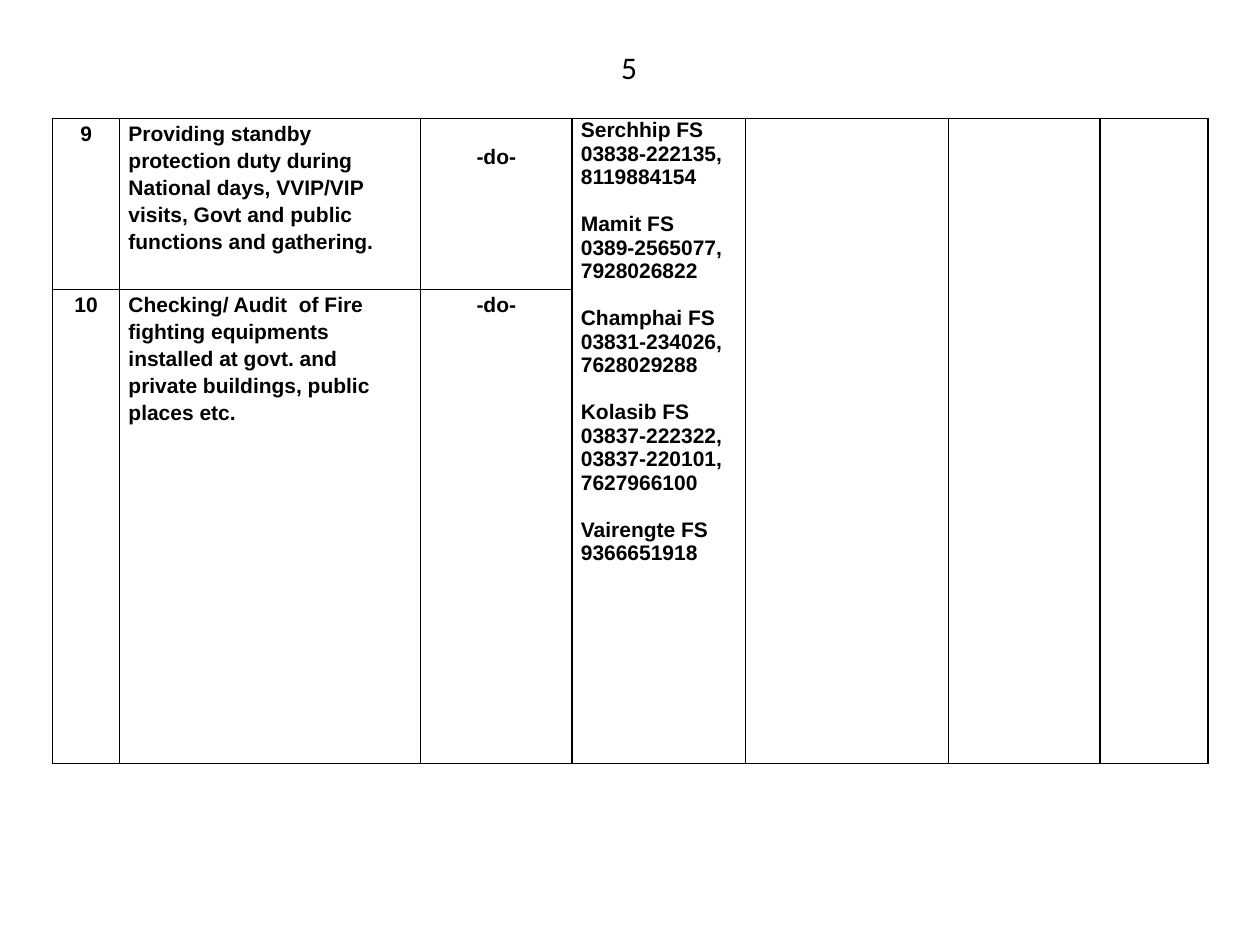
from dataclasses import dataclass

from lxml import etree
from pptx import Presentation
from pptx.dml.color import RGBColor
from pptx.enum.text import MSO_AUTO_SIZE, PP_ALIGN
from pptx.oxml.ns import qn
from pptx.util import Cm, Pt

LEFT, CENTER = PP_ALIGN.LEFT, PP_ALIGN.CENTER
FIT_SHAPE = MSO_AUTO_SIZE.SHAPE_TO_FIT_TEXT


@dataclass(frozen=True)
class Theme:
    ink: str = "000000"
    table_font: str = "Arial"
    number_font: str = "Calibri"
    table_size: float = 12
    number_size: float = 18
    border: float = 1
    line_spacing: float = 1.15
    station_gap: float = 13.4


@dataclass(frozen=True)
class Service:
    number: str
    duty: str
    period: str
    period_top: float = 0


@dataclass(frozen=True)
class Station:
    name: str
    phones: tuple[str, ...]


THEME = Theme()
COLUMNS = (1.35, 6.07, 3.05, 3.5, 4.09, 3.05, 2.18)
ROWS = (3.45, 9.55)
FIRST_SHARED = 3
SERVICES = (
    Service("9", "Providing standby protection duty during National days, VVIP/VIP "
            "visits, Govt and public functions and gathering.", "-do-", 0.47),
    Service("10", "Checking/ Audit  of Fire fighting equipments  installed at govt. and "
            "private buildings, public places etc.", "-do-"),
)
STATIONS = (
    Station("Serchhip FS", ("03838-222135,", "8119884154")),
    Station("Mamit FS", ("0389-2565077,", "7928026822")),
    Station("Champhai FS", ("03831-234026,", "7628029288")),
    Station("Kolasib FS", ("03837-222322,", "03837-220101,", "7627966100")),
    Station("Vairengte FS", ("9366651918",)),
)


def write(tf, text: str, *, first: bool = True, font: str = THEME.table_font,
          size: float = THEME.table_size, bold: bool = True, align=LEFT,
          spacing: float = 1.0, before: float = 0) -> None:
    p = tf.paragraphs[0] if first else tf.add_paragraph()
    p.alignment = align
    p.line_spacing = spacing
    p.space_before = Pt(before)
    r = p.add_run()
    r.text = text
    r.font.name = font
    r.font.size = Pt(size)
    r.font.bold = bold
    r.font.color.rgb = RGBColor.from_string(THEME.ink)


def format_cell(cell) -> None:
    cell.margin_left = cell.margin_right = Cm(0.18)
    cell.margin_top = cell.margin_bottom = Cm(0)
    props = cell._tc.get_or_add_tcPr()
    for side in ("a:lnL", "a:lnR", "a:lnT", "a:lnB"):
        line = etree.SubElement(props, qn(side), w=str(Pt(THEME.border)))
        fill = etree.SubElement(line, qn("a:solidFill"))
        etree.SubElement(fill, qn("a:srgbClr"), val=THEME.ink)
    cell.fill.background()


def add_service(table, row: int, service: Service) -> None:
    columns = ((service.number, CENTER), (service.duty, LEFT), (service.period, CENTER))
    for col, (text, align) in enumerate(columns):
        write(table.cell(row, col).text_frame, text, align=align,
              spacing=THEME.line_spacing)
    table.cell(row, 2).margin_top = Cm(service.period_top)


def add_stations(tf, stations: tuple[Station, ...]) -> None:
    for i, station in enumerate(stations):
        write(tf, station.name, first=i == 0, before=THEME.station_gap if i else 0)
        for phone in station.phones:
            write(tf, phone, first=False)


def add_services_table(slide) -> None:
    frame = slide.shapes.add_table(len(ROWS), len(COLUMNS), Cm(1.06), Cm(2.39),
                                   Cm(sum(COLUMNS)), Cm(sum(ROWS)))
    table = frame.table
    table.first_row = table.horz_banding = False
    for column, width in zip(table.columns, COLUMNS):
        column.width = Cm(width)
    for row, height in zip(table.rows, ROWS):
        row.height = Cm(height)
    for cell in table.iter_cells():
        format_cell(cell)
    for col in range(FIRST_SHARED, len(COLUMNS)):
        table.cell(0, col).merge(table.cell(len(ROWS) - 1, col))
    for row, service in enumerate(SERVICES):
        add_service(table, row, service)
    add_stations(table.cell(0, FIRST_SHARED).text_frame, STATIONS)


def add_page_number(slide, number: str) -> None:
    s = slide.shapes.add_textbox(Cm(12.27), Cm(0.84), Cm(0.84), Cm(1.02))
    tf = s.text_frame
    tf.word_wrap = False
    tf.auto_size = FIT_SHAPE
    write(tf, number, font=THEME.number_font, size=THEME.number_size, bold=False)


def main() -> None:
    prs = Presentation()
    prs.slide_width, prs.slide_height = Cm(25.4), Cm(19.05)
    slide = prs.slides.add_slide(prs.slide_layouts[6])
    add_services_table(slide)
    add_page_number(slide, "5")
    prs.save("out.pptx")


if __name__ == "__main__":
    main()
